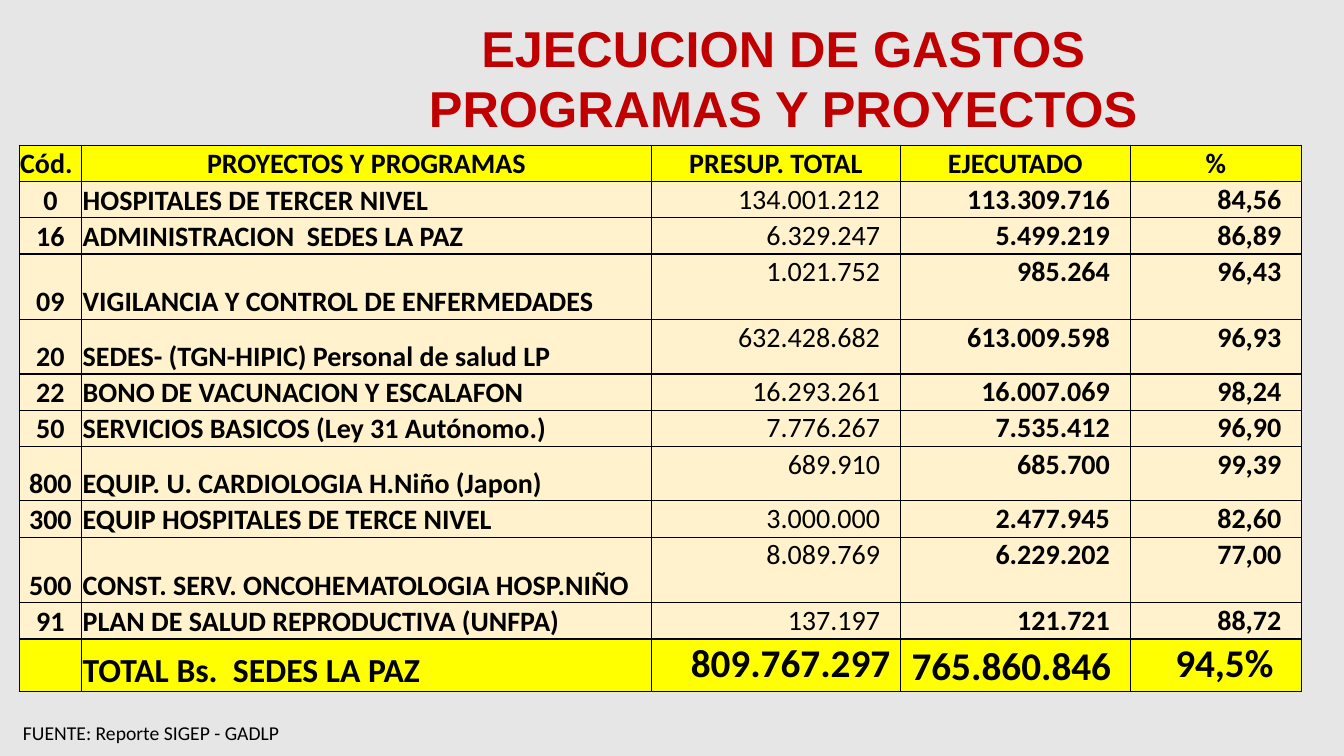
from lxml import etree
from pptx import Presentation
from pptx import util as u
from pptx.dml.color import RGBColor
from pptx.enum import text
from pptx.oxml import ns

COLORS = {
    "page": "E7E6E6",
    "title": "C00000",
    "ink": "000000",
    "strong": "FFFF00",
    "body": "FFF2CC",
}
LEFT, CENTER, RIGHT = text.PP_ALIGN.LEFT, text.PP_ALIGN.CENTER, text.PP_ALIGN.RIGHT
TOP, BOTTOM = text.MSO_ANCHOR.TOP, text.MSO_ANCHOR.BOTTOM

COLUMNS = [0.62, 5.65, 2.47, 2.28, 1.7]
LINE, MIDDLE, TALL, TOTAL_HEIGHT = 0.36, 0.54, 0.65, 0.52
HEADER = ["Cód.", "PROYECTOS Y PROGRAMAS", "PRESUP. TOTAL", "EJECUTADO", "%"]
PROGRAMS = [
    (LINE, "0", "HOSPITALES DE TERCER NIVEL", "134.001.212", "113.309.716", "84,56"),
    (LINE, "16", "ADMINISTRACION  SEDES LA PAZ", "6.329.247", "5.499.219", "86,89"),
    (TALL, "09", "VIGILANCIA Y CONTROL DE ENFERMEDADES", "1.021.752", "985.264", "96,43"),
    (MIDDLE, "20", "SEDES- (TGN-HIPIC) Personal de salud LP", "632.428.682", "613.009.598", "96,93"),
    (LINE, "22", "BONO DE VACUNACION Y ESCALAFON", "16.293.261", "16.007.069", "98,24"),
    (LINE, "50", "SERVICIOS BASICOS (Ley 31 Autónomo.)", "7.776.267", "7.535.412", "96,90"),
    (MIDDLE, "800", "EQUIP. U. CARDIOLOGIA H.Niño (Japon)", "689.910", "685.700", "99,39"),
    (LINE, "300", "EQUIP HOSPITALES DE TERCE NIVEL", "3.000.000", "2.477.945", "82,60"),
    (TALL, "500", "CONST. SERV. ONCOHEMATOLOGIA HOSP.NIÑO", "8.089.769", "6.229.202", "77,00"),
    (LINE, "91", "PLAN DE SALUD REPRODUCTIVA (UNFPA)", "137.197", "121.721", "88,72"),
]
TOTAL = ["", "TOTAL Bs.  SEDES LA PAZ", "809.767.297", "765.860.846", "94,5%"]

HEADER_STYLE = [(align, BOTTOM, 20, True, 0.01) for align in [LEFT] + [CENTER] * 4]
PROGRAM_STYLE = [
    (CENTER, BOTTOM, 20, True, 0.01),
    (LEFT, BOTTOM, 20, True, 0.01),
    (RIGHT, TOP, 20, False, 0.2),
    (RIGHT, TOP, 20, True, 0.2),
    (RIGHT, TOP, 20, True, 0.2),
]
TOTAL_STYLE = [
    (CENTER, BOTTOM, 20, True, 0.01),
    (LEFT, BOTTOM, 24, True, 0.01),
    (RIGHT, TOP, 28, True, 0.1),
    (RIGHT, BOTTOM, 28, True, 0.19),
    (RIGHT, TOP, 28, True, 0.28),
]


def color(name):
    return RGBColor.from_string(COLORS[name])


def format_text(frame, font, size, bold, ink, align):
    for para in frame.paragraphs:
        para.alignment = align
        for span in para.runs:
            span.font.name = font
            span.font.size = u.Pt(size)
            span.font.bold = bold
            span.font.color.rgb = color(ink)


def add_borders(cell):
    properties = cell._tc.get_or_add_tcPr()
    for side in ("a:lnL", "a:lnR", "a:lnT", "a:lnB"):
        line = etree.SubElement(properties, ns.qn(side), w=str(u.Pt(1)))
        fill = etree.SubElement(line, ns.qn("a:solidFill"))
        etree.SubElement(fill, ns.qn("a:srgbClr"), val=COLORS["ink"])


def fill_cell(cell, value, style, fill):
    align, anchor, size, bold, right_margin = style
    add_borders(cell)
    cell.fill.solid()
    cell.fill.fore_color.rgb = color(fill)
    cell.vertical_anchor = anchor
    cell.margin_left = cell.margin_top = u.Inches(0.01)
    cell.margin_right = u.Inches(right_margin)
    cell.margin_bottom = 0
    cell.text_frame.text = value
    format_text(cell.text_frame, "Calibri", size, bold, "ink", align)


def add_title(page, left, top, width, height):
    box = page.shapes.add_textbox(*map(u.Inches, (left, top, width, height)))
    frame = box.text_frame
    frame.word_wrap = True
    frame.margin_right = u.Inches(0.3)
    frame.text = "EJECUCION DE GASTOS\nPROGRAMAS Y PROYECTOS"
    format_text(frame, "Arial", 36, True, "title", CENTER)


def add_budget_table(page, left, top):
    rows = [(LINE, HEADER, HEADER_STYLE, "strong")]
    rows += [(height, values, PROGRAM_STYLE, "body") for height, *values in PROGRAMS]
    rows.append((TOTAL_HEIGHT, TOTAL, TOTAL_STYLE, "strong"))
    size = (sum(COLUMNS), sum(row[0] for row in rows))
    holder = page.shapes.add_table(
        len(rows), len(COLUMNS), *map(u.Inches, (left, top, *size))
    )
    table = holder.table
    table.first_row = table.horz_banding = False
    for column, width in zip(table.columns, COLUMNS):
        column.width = u.Inches(width)
    for row, (height, values, styles, fill) in zip(table.rows, rows):
        row.height = u.Inches(height)
        for cell, value, style in zip(row.cells, values, styles):
            fill_cell(cell, value, style, fill)


def add_source(page, left, top, width, height):
    box = page.shapes.add_textbox(*map(u.Inches, (left, top, width, height)))
    box.text_frame.word_wrap = False
    box.text_frame.text = "FUENTE: Reporte SIGEP - GADLP"
    format_text(box.text_frame, "Calibri", 14, False, "ink", LEFT)


def main():
    deck = Presentation()
    deck.slide_width, deck.slide_height = u.Inches(13.33), u.Inches(7.5)
    page = deck.slides.add_slide(deck.slide_layouts[6])
    page.background.fill.solid()
    page.background.fill.fore_color.rgb = color("page")
    add_title(page, 2.83, 0.12, 10.08, 1.31)
    add_budget_table(page, 0.19, 1.44)
    add_source(page, 0.13, 7.1, 2.76, 0.34)
    deck.save("out.pptx")


if __name__ == "__main__":
    main()
